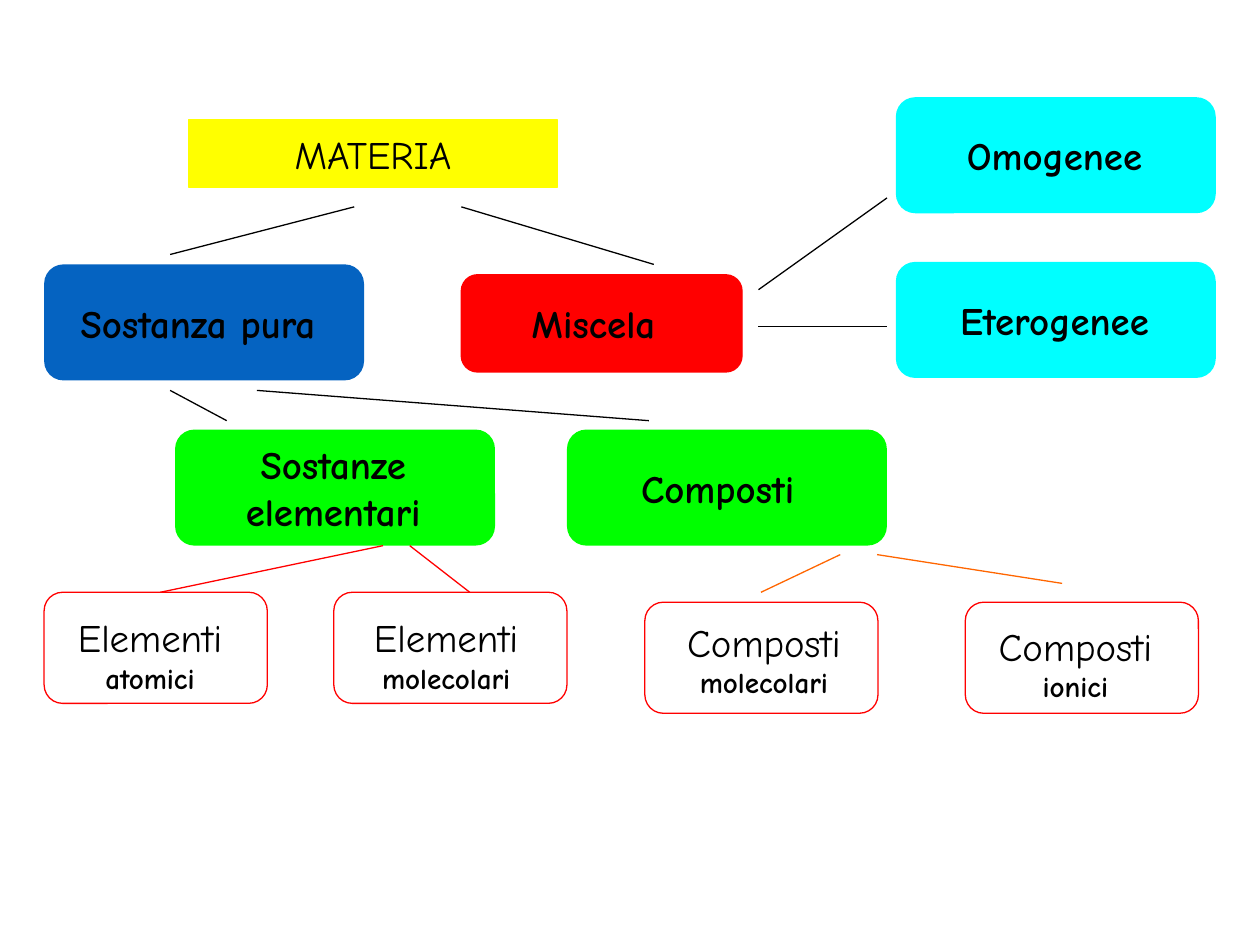
from dataclasses import dataclass

from lxml.etree import SubElement
from pptx import Presentation
from pptx.dml.color import RGBColor
from pptx.enum.shapes import MSO_CONNECTOR as Connector, MSO_SHAPE as Shape
from pptx.enum.text import MSO_ANCHOR as Anchor, PP_ALIGN as Align
from pptx.oxml.ns import qn
from pptx.util import Cm, Pt


@dataclass(frozen=True)
class Theme:
    font: str = "Comic Neue"
    title_size: float = 22.2
    detail_size: float = 16.6
    line_width: float = 0.75
    black: str = "000000"
    red: str = "FF0000"
    orange: str = "FF6600"
    yellow: str = "FFFF00"
    blue: str = "0563C1"
    green: str = "00FF00"
    cyan: str = "00FFFF"


@dataclass(frozen=True)
class Box:
    left: float
    top: float
    width: float
    height: float

    def inside(self, left, top, width, height):
        return Box(self.left + left, self.top + top, width, height)

    def lengths(self):
        return [Cm(value) for value in (self.left, self.top, self.width, self.height)]


THEME = Theme()
NODE_WIDTH, NODE_HEIGHT = 6.45, 2.34
LEAF_HEIGHT = 2.24
LINE_HEIGHT, PAIR_HEIGHT, LEAF_TEXT_HEIGHT = 1.19, 2.16, 1.91


def rgb(color):
    return RGBColor.from_string(color)


def add_text(slide, box, lines, bold=False, align=Align.CENTER, anchor=Anchor.TOP, detail=None):
    frame = slide.shapes.add_textbox(*box.lengths()).text_frame
    frame.word_wrap = False
    frame.vertical_anchor = anchor
    styles = [(line, THEME.title_size, bold) for line in lines]
    if detail:
        styles.append((detail, THEME.detail_size, True))
    for index, (text, size, is_bold) in enumerate(styles):
        paragraph = frame.add_paragraph() if index else frame.paragraphs[0]
        paragraph.alignment = align
        run = paragraph.add_run()
        run.text = text
        run.font.name = THEME.font
        run.font.size = Pt(size)
        run.font.bold = is_bold
        run.font.color.rgb = rgb(THEME.black)


def add_block(slide, box, fill=None, outline=None, kind=Shape.ROUNDED_RECTANGLE):
    shape = slide.shapes.add_shape(kind, *box.lengths())
    shape.shadow.inherit = False
    if fill:
        shape.fill.solid()
        shape.fill.fore_color.rgb = rgb(fill)
    else:
        shape.fill.background()
    if outline:
        shape.line.color.rgb = rgb(outline)
        shape.line.width = Pt(THEME.line_width)
    else:
        shape.line.fill.background()


def add_links(slide, box, links, color=THEME.black):
    for x1, y1, x2, y2 in links:
        ends = (box.left + x1, box.top + y1, box.left + x2, box.top + y2)
        connector = slide.shapes.add_connector(Connector.STRAIGHT, *map(Cm, ends))
        connector.line.color.rgb = rgb(color)
        connector.line.width = Pt(THEME.line_width)
        SubElement(connector._element.spPr, qn("a:effectLst"))


def draw_matter(slide, box):
    add_block(slide, box, THEME.yellow, THEME.yellow, Shape.RECTANGLE)
    add_text(slide, box, ["MATERIA"], anchor=Anchor.MIDDLE)
    add_links(slide, box, [(3.33, 1.76, -0.38, 2.72), (5.49, 1.76, 9.37, 2.92)])


def draw_pure_substance(slide, box):
    add_block(slide, box, THEME.blue)
    add_text(slide, box.inside(0.13, 0.58, 5.94, LINE_HEIGHT), ["Sostanza pura"], bold=True)
    add_links(slide, box, [(2.54, 2.54, 3.68, 3.15), (4.29, 2.54, 12.19, 3.15)])


def draw_mixture(slide, box):
    add_block(slide, box, THEME.red, THEME.red)
    label = box.inside(1.17, 0.38, 3.33, LINE_HEIGHT)
    add_text(slide, label, ["Miscela"], bold=True, align=Align.LEFT)
    add_links(slide, box, [(5.99, 0.3, 8.58, -1.55), (5.99, 1.04, 8.58, 1.04)])


def draw_mixture_kinds(slide, box):
    pitch = box.height - NODE_HEIGHT
    kinds = [("Omogenee", 1.04, 4.32), ("Eterogenee", 0.81, 4.78)]
    for row, (name, left, width) in enumerate(kinds):
        node = box.inside(0, row * pitch, box.width, NODE_HEIGHT)
        add_block(slide, node, THEME.cyan)
        add_text(slide, node.inside(left, 0.58, width, LINE_HEIGHT), [name], bold=True)


def draw_leaf(slide, box, name, detail, label):
    add_text(slide, box.inside(*label, LEAF_TEXT_HEIGHT), [name], detail=detail)
    add_block(slide, box, outline=THEME.red)


def draw_elements(slide, box):
    add_block(slide, box, THEME.green)
    label = box.inside(0.94, 0.1, 4.5, PAIR_HEIGHT)
    add_text(slide, label, ["Sostanze", "elementari"], bold=True)
    leaves = [("atomici", -2.64, 4.5, 0.28), ("molecolari", 3.2, 4.7, 0.41)]
    for detail, left, width, indent in leaves:
        leaf = box.inside(left, 3.28, width, LEAF_HEIGHT)
        draw_leaf(slide, leaf, "Elementi", detail, (indent, 0.3, 3.71))
    links = [(4.19, box.height, -0.3, 3.28), (4.73, box.height, 5.94, 3.28)]
    add_links(slide, box, links, THEME.red)


def draw_compounds(slide, box):
    add_block(slide, box, THEME.green)
    add_text(slide, box.inside(1.12, 0.58, 3.84, LINE_HEIGHT), ["Composti"], bold=True)
    leaves = [("molecolari", 1.57, 0.48, 0.2), ("ionici", 8.03, 0.3, 0.28)]
    for detail, left, indent, drop in leaves:
        leaf = box.inside(left, 3.48, 4.7, LEAF_HEIGHT)
        draw_leaf(slide, leaf, "Composti", detail, (indent, drop, 3.84))
    add_links(slide, box, [(5.51, 2.52, 3.91, 3.28), (6.25, 2.52, 9.98, 3.1)], THEME.orange)


def main():
    presentation = Presentation()
    presentation.slide_width, presentation.slide_height = Cm(25.4), Cm(19.05)
    slide = presentation.slides.add_slide(presentation.slide_layouts[6])
    draw_matter(slide, Box(3.81, 2.41, 7.42, 1.37))
    draw_pure_substance(slide, Box(0.89, 5.33, NODE_WIDTH, NODE_HEIGHT))
    draw_mixture(slide, Box(9.3, 5.54, 5.66, 1.96))
    draw_mixture_kinds(slide, Box(18.06, 1.96, NODE_WIDTH, 5.66))
    draw_elements(slide, Box(3.53, 8.66, NODE_WIDTH, NODE_HEIGHT))
    draw_compounds(slide, Box(11.43, 8.66, NODE_WIDTH, NODE_HEIGHT))
    presentation.save("out.pptx")


if __name__ == "__main__":
    main()
